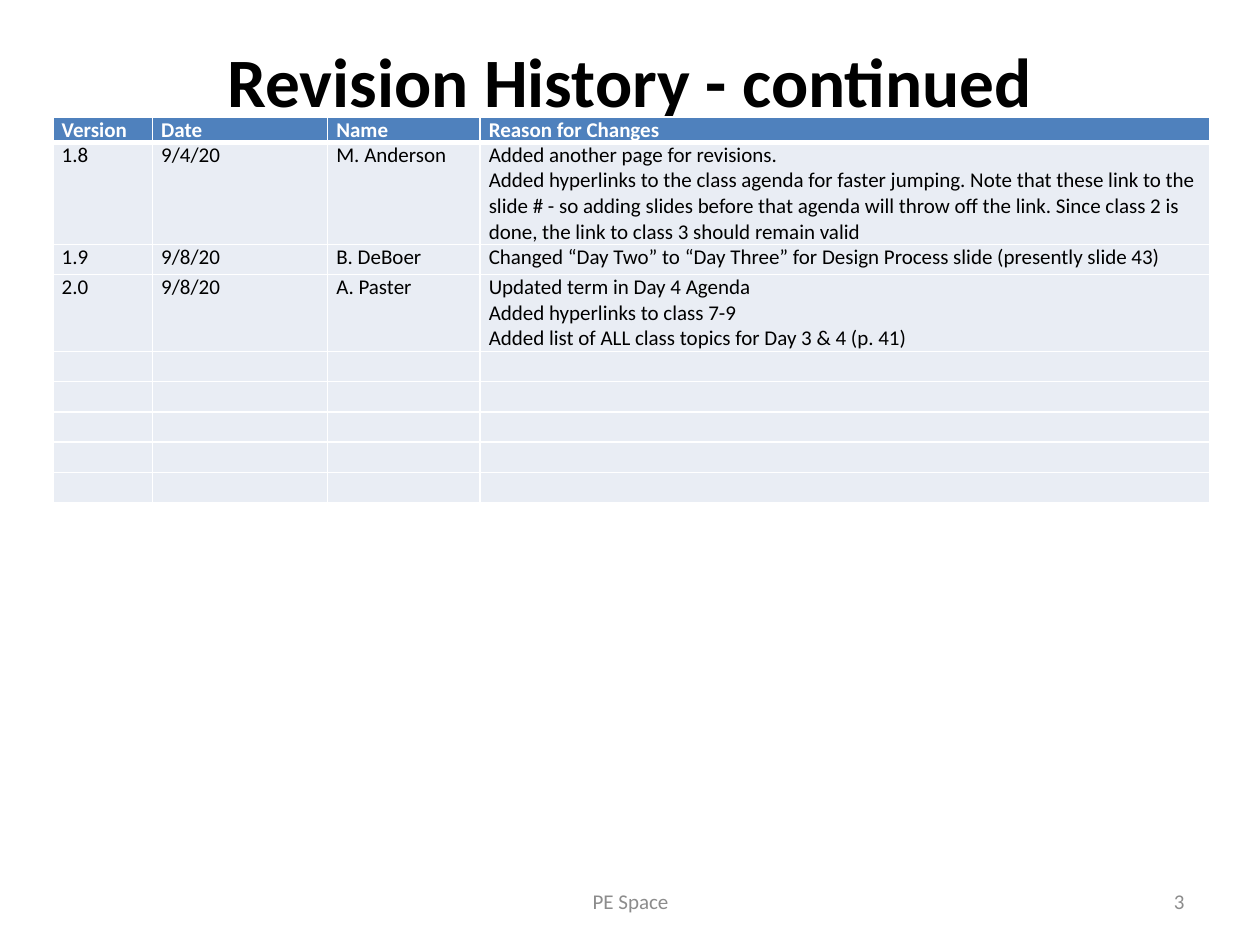
from lxml.etree import SubElement
from pptx import Presentation
from pptx.dml.color import RGBColor
from pptx.enum.text import MSO_ANCHOR, PP_ALIGN
from pptx.oxml.ns import qn
from pptx.util import Inches, Pt

FONT = "Calibri"
BLACK, WHITE, GRAY = "000000", "FFFFFF", "8C8C8C"
HEADER_FILL, BODY_FILL = "4F81BD", "E9EDF4"

TITLE = "Revision History - continued"
HEADINGS = ("Version", "Date", "Name", "Reason for Changes")
# "\n" starts a paragraph, "\v" breaks a line within one
REVISIONS = [
    ("1.8", "9/4/20", "M. Anderson",
     "Added another page for revisions. \v"
     "Added hyperlinks to the class agenda for faster jumping. Note that these "
     "link to the slide # - so adding slides before that agenda will throw off "
     "the link. Since class 2 is done, the link to class 3 should remain valid"),
    ("1.9", "9/8/20", "B. DeBoer",
     "Changed “Day Two” to “Day Three” for Design Process slide "
     "(presently slide 43)"),
    ("2.0", "9/8/20", "A. Paster",
     "Updated term in Day 4 Agenda\n"
     "Added hyperlinks to class 7-9\n"
     "Added list of ALL class topics for Day 3 & 4 (p. 41)"),
]
EMPTY_ROWS = 5
COLUMN_WIDTHS = (0.79, 1.39, 1.21, 5.79)
ROW_HEIGHTS = [0.2, 0.81, 0.24, 0.61] + [0.24] * EMPTY_ROWS
TABLE_LEFT, TABLE_TOP = 0.42, 0.93


def color(value):
    return RGBColor.from_string(value)


def write(frame, text, size=12, fill=BLACK, bold=False, align=PP_ALIGN.LEFT):
    for index, line in enumerate(text.split("\n")):
        para = frame.paragraphs[0] if index == 0 else frame.add_paragraph()
        para.text = line
        para.alignment = align
        for span in para.runs:
            span.font.name = FONT
            span.font.size = Pt(size)
            span.font.bold = bold
            span.font.color.rgb = color(fill)


def add_text(page, text, left, top, width, height, anchor=MSO_ANCHOR.MIDDLE, **style):
    frame = page.shapes.add_textbox(
        Inches(left), Inches(top), Inches(width), Inches(height)).text_frame
    frame.word_wrap = True
    frame.vertical_anchor = anchor
    write(frame, text, **style)
    return frame


def add_borders(cell, **widths):
    properties = cell._tc.get_or_add_tcPr()
    for side in "LRTB":
        line = SubElement(properties, qn(f"a:ln{side}"), w=str(Pt(widths.get(side, 1))))
        SubElement(SubElement(line, qn("a:solidFill")), qn("a:srgbClr"), val=WHITE)


def fill_cell(cell, text, header, below_header):
    cell.margin_left = cell.margin_right = Inches(0.07)
    cell.margin_top = cell.margin_bottom = 0
    add_borders(cell, B=3 if header else 1, T=3 if below_header else 1)
    cell.fill.solid()
    cell.fill.fore_color.rgb = color(HEADER_FILL if header else BODY_FILL)
    write(cell.text_frame, text, fill=WHITE if header else BLACK, bold=header)
    if not text:
        # The end mark's size keeps an empty row from growing
        SubElement(cell.text_frame.paragraphs[0]._p, qn("a:endParaRPr"), sz="1200")


def add_revision_table(page):
    rows = [HEADINGS, *REVISIONS] + [("",) * len(HEADINGS)] * EMPTY_ROWS
    table = page.shapes.add_table(
        len(rows), len(HEADINGS), Inches(TABLE_LEFT), Inches(TABLE_TOP),
        Inches(sum(COLUMN_WIDTHS)), Inches(sum(ROW_HEIGHTS))).table
    for column, width in zip(table.columns, COLUMN_WIDTHS):
        column.width = Inches(width)
    for row, height in zip(table.rows, ROW_HEIGHTS):
        row.height = Inches(height)
    for row_index, texts in enumerate(rows):
        for column_index, text in enumerate(texts):
            fill_cell(table.cell(row_index, column_index), text,
                      header=row_index == 0, below_header=row_index == 1)


def main():
    deck = Presentation()
    deck.slide_width, deck.slide_height = Inches(10), Inches(7.5)
    page = deck.slides.add_slide(deck.slide_layouts[6])
    title = add_text(page, TITLE, 0.5, 0.3, 9, 1.25, anchor=MSO_ANCHOR.TOP,
                     size=39.6, bold=True, align=PP_ALIGN.CENTER)
    title.margin_top = 0
    add_revision_table(page)
    add_text(page, "PE Space", 3.42, 6.95, 3.17, 0.4, fill=GRAY, align=PP_ALIGN.CENTER)
    add_text(page, "3", 7.17, 6.95, 2.33, 0.4, fill=GRAY, align=PP_ALIGN.RIGHT)
    deck.save("out.pptx")


if __name__ == "__main__":
    main()
